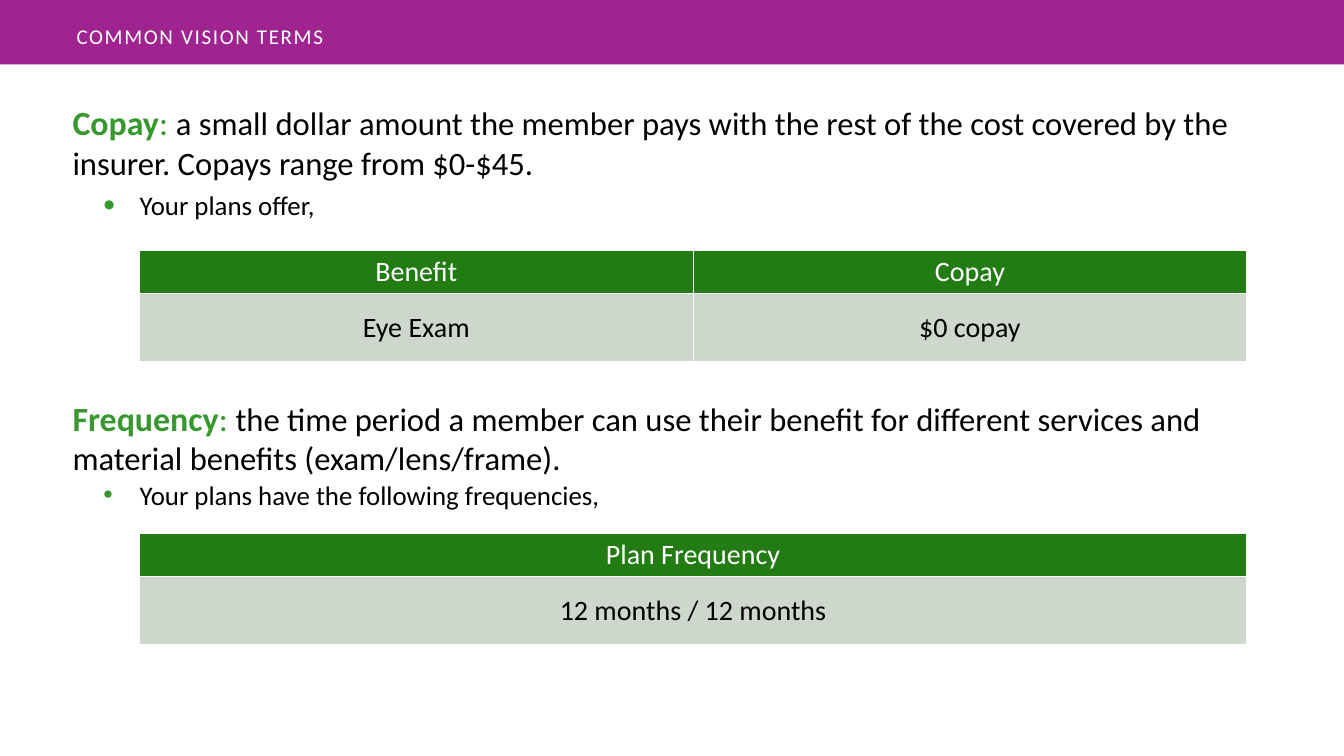
from lxml.etree import SubElement
from pptx import Presentation
from pptx.dml.color import RGBColor as RGB
from pptx.enum.shapes import MSO_SHAPE as SHAPE
from pptx.enum.text import MSO_ANCHOR as ANCHOR, PP_ALIGN as ALIGN
from pptx.oxml.ns import qn
from pptx.util import Pt

COLORS = {"band": "9F248F", "term": "36982E", "header": "227B13",
          "cell": "CDD7CC", "white": "FFFFFF", "black": "000000"}
FONT = "Calibri"


class SlideBuilder:
    def __init__(self, s):
        self.s = s

    def color(self, name):
        return RGB.from_string(COLORS[name])

    def set_margins(self, obj, x, y):
        margins = {"margin_left": x, "margin_right": x,
                   "margin_top": y, "margin_bottom": y}
        for name, value in margins.items():
            setattr(obj, name, Pt(value))

    def band(self, x, y, w, h):
        sp = self.s.shapes.add_shape(SHAPE.RECTANGLE, Pt(x), Pt(y), Pt(w), Pt(h))
        sp.shadow.inherit = False
        sp.fill.solid()
        sp.fill.fore_color.rgb = self.color("band")
        sp.line.fill.background()

    def text_box(self, x, y, w, h, inset_x, inset_y):
        tf = self.s.shapes.add_textbox(Pt(x), Pt(y), Pt(w), Pt(h)).text_frame
        tf.word_wrap = True
        self.set_margins(tf, inset_x, inset_y)
        return tf

    def paragraph(self, tf, before=0):
        p = tf.paragraphs[0] if not tf.paragraphs[0].runs else tf.add_paragraph()
        p.space_before = Pt(before)
        return p

    def run(self, p, text, size, color="black", bold=False, spacing=None):
        r = p.add_run()
        r.text = text
        style = {"name": FONT, "size": Pt(size), "bold": bold}
        for name, value in style.items():
            setattr(r.font, name, value)
        r.font.color.rgb = self.color(color)
        if spacing:
            r.font._element.set("spc", str(round(spacing * 100)))

    def definition(self, tf, term, meaning, before=0):
        p = self.paragraph(tf, before)
        self.run(p, term, 24.2, "term", bold=True)
        self.run(p, ": ", 24.2, "term")
        self.run(p, meaning, 23.3)

    def bullet(self, tf, text, before, percent):
        p = self.paragraph(tf, before)
        self.run(p, text, 19.2)
        pPr = p._p.get_or_add_pPr()
        pPr.set("marL", str(Pt(48)))
        pPr.set("indent", str(Pt(-26)))
        clr = SubElement(pPr, qn("a:buClr"))
        SubElement(clr, qn("a:srgbClr"), val=COLORS["term"])
        SubElement(pPr, qn("a:buSzPct"), val=str(percent * 1000))
        SubElement(pPr, qn("a:buFont"), typeface="Arial")
        SubElement(pPr, qn("a:buChar"), char="•")

    def cell_borders(self, cell):
        tcPr = cell._tc.get_or_add_tcPr()
        for i, side in enumerate(("lnL", "lnR", "lnT", "lnB")):
            ln = tcPr.makeelement(qn("a:" + side), {"w": str(Pt(1))})
            fill = SubElement(ln, qn("a:solidFill"))
            SubElement(fill, qn("a:srgbClr"), val=COLORS["white"])
            tcPr.insert(i, ln)

    def table(self, x, y, w, row_heights, rows):
        n_cols = len(rows[0])
        table = self.s.shapes.add_table(len(rows), n_cols, Pt(x), Pt(y), Pt(w),
                                        Pt(sum(row_heights))).table
        for col in table.columns:
            col.width = Pt(w / n_cols)
        for i, (height, texts) in enumerate(zip(row_heights, rows)):
            table.rows[i].height = Pt(height)
            fill, color = ("cell", "black") if i else ("header", "white")
            for j, text in enumerate(texts):
                cell = table.cell(i, j)
                cell.fill.solid()
                cell.fill.fore_color.rgb = self.color(fill)
                cell.vertical_anchor = ANCHOR.MIDDLE
                self.set_margins(cell, 9, 3)
                p = cell.text_frame.paragraphs[0]
                p.alignment = ALIGN.CENTER
                self.run(p, text, 20, color)
                self.cell_borders(cell)


def main():
    prs = Presentation()
    prs.slide_width, prs.slide_height = Pt(960), Pt(540)
    b = SlideBuilder(prs.slides.add_slide(prs.slide_layouts[6]))

    b.band(0, 0, 960, 46)
    tf = b.text_box(43.2, 10.8, 698, 31, 11.5, 5.8)
    b.run(b.paragraph(tf), "COMMON VISION TERMS", 15, "white", spacing=1.2)

    tf = b.text_box(43.2, 68.4, 874, 335, 8.6, 4.3)
    b.definition(tf, "Copay", "a small dollar amount the member pays with the rest of "
                 "the cost covered by the insurer. Copays range from $0-$45.")
    b.bullet(tf, "Your plans offer,", before=5, percent=125)
    b.definition(tf, "Frequency", "the time period a member can use their benefit for "
                 "different services and material benefits (exam/lens/frame).", before=126)
    b.bullet(tf, "Your plans have the following frequencies,", before=1, percent=100)

    tables = [(178.8, [["Benefit", "Copay"], ["Eye Exam", "$0 copay"]]),
              (381, [["Plan Frequency"], ["12 months / 12 months"]])]
    for y, rows in tables:
        b.table(99.6, y, 791, (31, 48.5), rows)

    prs.save("out.pptx")


if __name__ == "__main__":
    main()
